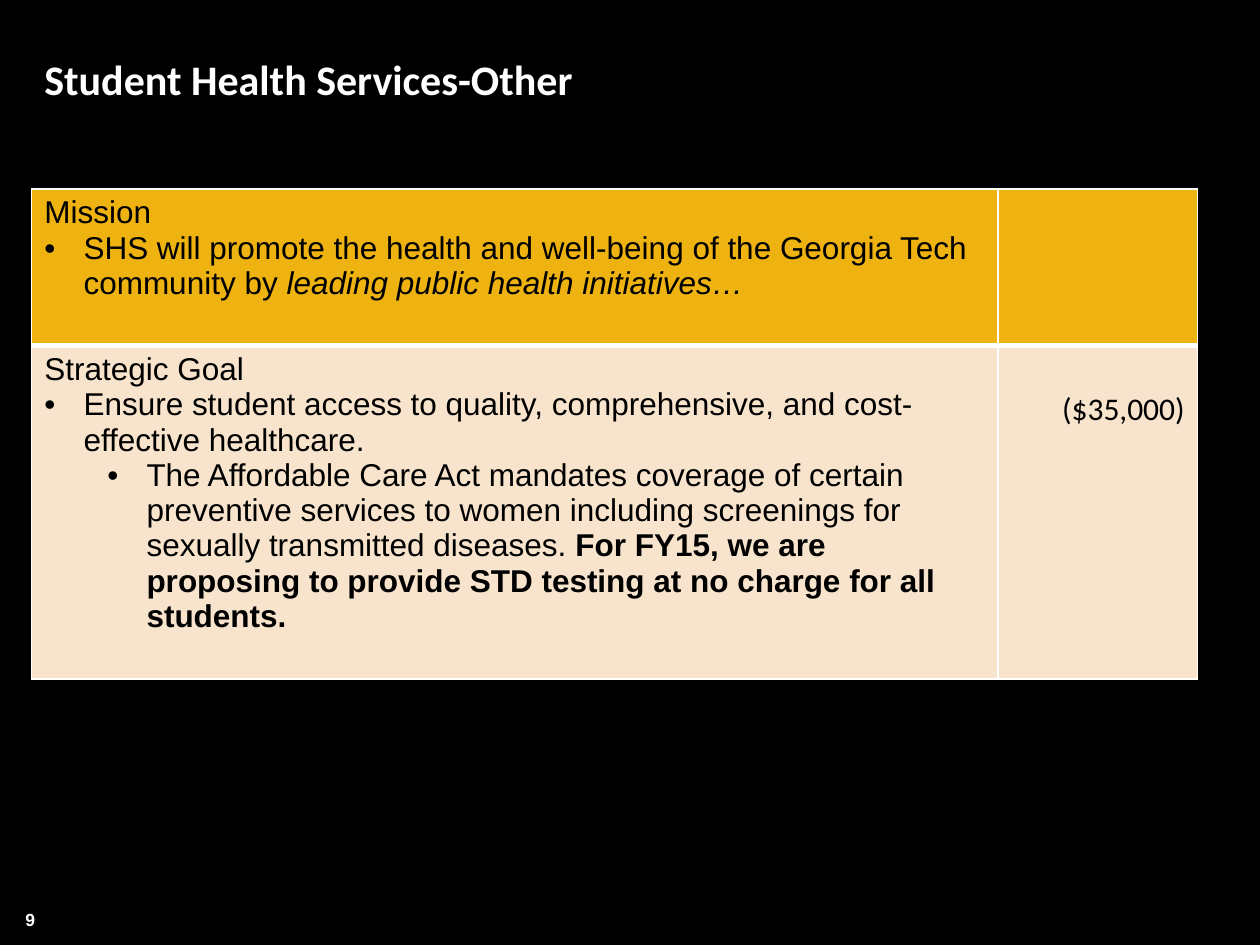
from dataclasses import dataclass

from lxml.etree import SubElement
from pptx import Presentation
from pptx.dml.color import RGBColor
from pptx.enum.text import MSO_ANCHOR, PP_ALIGN
from pptx.oxml import parse_xml
from pptx.oxml.ns import nsdecls, qn
from pptx.util import Cm, Pt


@dataclass(frozen=True)
class Theme:
    background: str = "000000"
    light: str = "FFFFFF"
    dark: str = "000000"
    mission: str = "EEB211"
    goal: str = "F8E4CC"
    heading_font: str = "Calibri"
    body_font: str = "Arial"
    title_size: int = 24
    body_size: int = 18
    number_size: int = 10
    thin_border: int = 1
    thick_border: int = 3


@dataclass(frozen=True)
class Line:
    runs: tuple
    indent: float = 0
    font: str = Theme.body_font
    align: PP_ALIGN = PP_ALIGN.LEFT


class SlideBuilder:
    hanging = 0.79

    def __init__(self, slide, theme):
        self.slide = slide
        self.theme = theme
        fill = slide.background.fill
        fill.solid()
        fill.fore_color.rgb = RGBColor.from_string(theme.background)

    def style(self, paragraph, font, size, color, bold=None):
        paragraph.font.name = font
        paragraph.font.size = Pt(size)
        paragraph.font.bold = bold
        paragraph.font.color.rgb = RGBColor.from_string(color)

    def title(self, text, left, top, width, height):
        shape = self.slide.shapes.title
        shape.left, shape.top = Cm(left), Cm(top)
        shape.width, shape.height = Cm(width), Cm(height)
        frame = shape.text_frame
        frame.text = text
        frame.vertical_anchor = MSO_ANCHOR.MIDDLE
        paragraph = frame.paragraphs[0]
        paragraph.alignment = PP_ALIGN.LEFT
        self.style(paragraph, self.theme.heading_font, self.theme.title_size, self.theme.light, True)

    def page_number(self, text, left, top, width, height):
        shape = self.slide.shapes.add_textbox(Cm(left), Cm(top), Cm(width), Cm(height))
        frame = shape.text_frame
        frame.word_wrap = True
        frame.margin_left = frame.margin_right = 0
        frame.vertical_anchor = MSO_ANCHOR.MIDDLE
        frame.text = text
        paragraph = frame.paragraphs[0]
        paragraph.alignment = PP_ALIGN.CENTER
        self.style(paragraph, self.theme.body_font, self.theme.number_size, self.theme.light, True)

    def table(self, left, top, widths, heights):
        shape = self.slide.shapes.add_table(
            len(heights), len(widths), Cm(left), Cm(top), Cm(sum(widths)), Cm(sum(heights))
        )
        table = shape.table
        table.first_row = table.horz_banding = False
        for column, width in zip(table.columns, widths):
            column.width = Cm(width)
        for row, height in zip(table.rows, heights):
            row.height = Cm(height)
        return table

    def cell(self, cell, lines, fill, top_border, bottom_border):
        cell.fill.solid()
        cell.fill.fore_color.rgb = RGBColor.from_string(fill)
        thin = self.theme.thin_border
        borders = {"lnL": thin, "lnR": thin, "lnT": top_border, "lnB": bottom_border}
        properties = cell._tc.get_or_add_tcPr()
        for position, (tag, width) in enumerate(borders.items()):
            properties.insert(position, parse_xml(
                f'<a:{tag} {nsdecls("a")} w="{Pt(width)}"><a:solidFill>'
                f'<a:srgbClr val="{self.theme.light}"/></a:solidFill></a:{tag}>'
            ))
        frame = cell.text_frame
        for index, line in enumerate(lines):
            paragraph = frame.add_paragraph() if index else frame.paragraphs[0]
            self.line(paragraph, line)

    def line(self, paragraph, line):
        paragraph.alignment = line.align
        if line.indent:
            properties = paragraph._p.get_or_add_pPr()
            properties.set("marL", str(Cm(line.indent)))
            properties.set("indent", str(-Cm(self.hanging)))
            SubElement(properties, qn("a:buFont")).set("typeface", self.theme.body_font)
            SubElement(properties, qn("a:buChar")).set("char", "•")
        self.style(paragraph, line.font, self.theme.body_size, self.theme.dark)
        for text, emphasis in line.runs:
            run = paragraph.add_run()
            run.text = text
            if emphasis == "italic":
                run.font.italic = True
            elif emphasis == "bold":
                run.font.bold = True


def main():
    theme = Theme()
    presentation = Presentation()
    presentation.slide_width, presentation.slide_height = Cm(25.4), Cm(19.05)
    builder = SlideBuilder(presentation.slides.add_slide(presentation.slide_layouts[5]), theme)

    builder.title("Student Health Services-Other", 0.64, 0, 24.33, 3.18)
    builder.page_number("9", 0.05, 18.19, 1.12, 0.69)

    mission = [
        Line((("Mission", ""),)),
        Line((
            ("SHS will promote the health and well-being of the Georgia Tech community by ", ""),
            ("leading public health initiatives…", "italic"),
        ), indent=0.79),
    ]
    goal = [
        Line((("Strategic Goal", ""),)),
        Line((
            ("Ensure student access to quality, comprehensive, and cost-effective healthcare.", ""),
        ), indent=0.79),
        Line((
            ("The Affordable Care Act mandates coverage of certain preventive services to women "
             "including screenings for sexually transmitted diseases. ", ""),
            ("For FY15, we are proposing to provide STD testing at no charge for all students.", "bold"),
        ), indent=2.06),
    ]
    cost = [Line((("($35,000)", ""),), font=theme.heading_font, align=PP_ALIGN.RIGHT)]

    table = builder.table(0.64, 3.81, [19.48, 4.02], [3.16, 6.72])
    rows = [
        ([mission, []], theme.mission, theme.thin_border, theme.thick_border),
        ([goal, cost], theme.goal, theme.thick_border, theme.thin_border),
    ]
    for row, (contents, *look) in enumerate(rows):
        for column, lines in enumerate(contents):
            builder.cell(table.cell(row, column), lines, *look)
    table.cell(1, 1).margin_top = Cm(0.9)

    presentation.save("out.pptx")


if __name__ == "__main__":
    main()
